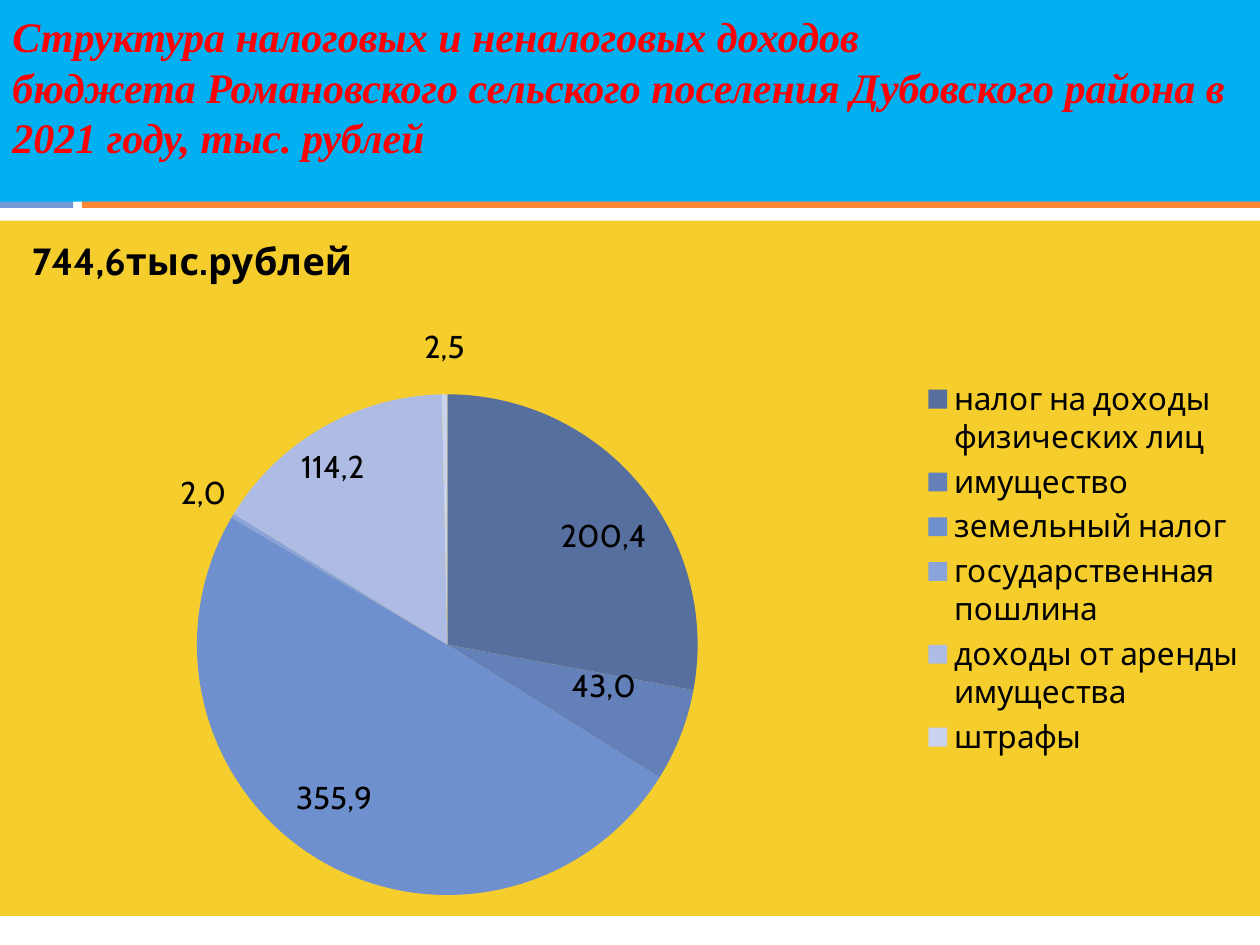
from lxml import etree
from pptx import Presentation
from pptx.chart.data import CategoryChartData
from pptx.dml.color import RGBColor
from pptx.enum import chart as ch, shapes, text
from pptx.oxml.ns import qn
from pptx.util import Inches, Pt

COLORS = {
    "header": "00B0F0", "title": "FF0000", "blue": "7598D9",
    "orange": "FE8637", "panel": "F5CD2D", "text": "000000",
}
TOTAL = "744,6тыс.рублей"
INSIDE = ch.XL_LABEL_POSITION.INSIDE_END
OUTSIDE = ch.XL_LABEL_POSITION.OUTSIDE_END
# category, value, slice colour, label position, label shift (share of chart)
INCOME = [
    ("налог на доходы физических лиц", 200.4, "566F9E", INSIDE, (0.01, 0.04)),
    ("имущество", 43, "6480B8", INSIDE, (-0.03, -0.04)),
    ("земельный налог", 355.9, "6F90CF", INSIDE, (-0.02, -0.05)),
    ("государственная пошлина", 2, "8BA3DB", OUTSIDE, (0, 0)),
    ("доходы от аренды имущества", 114.2, "AEBCE4", INSIDE, (-0.02, 0.02)),
    ("штрафы", 2.5, "CAD3ED", OUTSIDE, (0, -0.03)),
]


def rgb(name):
    return RGBColor.from_string(COLORS.get(name, name))


def add_bar(s, color, left, top, width, height):
    sp = s.shapes.add_shape(shapes.MSO_SHAPE.RECTANGLE, Inches(left), Inches(top),
                            Inches(width), Inches(height))
    sp.shadow.inherit = False
    sp.fill.solid()
    sp.fill.fore_color.rgb = rgb(color)
    sp.line.fill.background()
    return sp


def add_header(s, left, top, width, height):
    """Two-colour strip with the title block covering its upper part."""
    strip_top = top + height - 0.2
    add_bar(s, "blue", left, strip_top, 0.58, 0.25)
    add_bar(s, "orange", left + 0.65, strip_top, width - 0.65, 0.25)
    tf = add_bar(s, "header", left, top, width, height).text_frame
    tf.word_wrap = True
    tf.vertical_anchor = text.MSO_ANCHOR.MIDDLE
    p = tf.paragraphs[0]
    p.text = ("Структура налоговых и неналоговых доходов\v"
              "бюджета Романовского сельского поселения Дубовского района в "
              "2021 году, тыс. рублей")
    p.alignment = text.PP_ALIGN.LEFT
    p.font.name, p.font.size = "Times New Roman", Pt(24)
    p.font.bold = p.font.italic = True
    p.font.color.rgb = rgb("title")


def set_font(font, size, bold=False):
    font.name, font.size, font.bold = "Cabin", Pt(size), bold
    font.color.rgb = rgb("text")


def set_layout(parent, index, edge=False, inner=False, **place):
    """Give a chart part a manual layout, in shares of the chart."""
    for old in parent.findall(qn("c:layout")):
        parent.remove(old)
    layout = etree.Element(qn("c:layout"))
    manual = etree.SubElement(layout, qn("c:manualLayout"))
    values = {"layoutTarget": "inner"} if inner else {}
    if edge:
        values.update(xMode="edge", yMode="edge")
    for tag, value in {**values, **place}.items():
        etree.SubElement(manual, qn(f"c:{tag}")).set("val", str(value))
    parent.insert(index, layout)


def add_slice_labels(series):
    """Colour each slice and label it with its value."""
    for i, (_, value, color, position, (dx, dy)) in enumerate(INCOME):
        point = series.points[i]
        point.format.fill.solid()
        point.format.fill.fore_color.rgb = rgb(color)
        point.format.line.fill.background()
        label = point.data_label
        p = label.text_frame.paragraphs[0]
        p.text = f"{value:.1f}".replace(".", ",")
        set_font(p.font, 18)
        label.position = position
        if dx or dy:
            set_layout(label._dLbl, 1, x=dx, y=dy)
    labels = series.data_labels
    labels.show_value = labels.show_category_name = labels.show_series_name = True
    for leader in labels._element.findall(qn("c:showLeaderLines")):
        leader.set("val", "0")


def add_pie(s, left, top, width, height):
    data = CategoryChartData(number_format="0.0")
    data.categories = [row[0] for row in INCOME]
    data.add_series(TOTAL, [row[1] for row in INCOME])
    chart = s.shapes.add_chart(ch.XL_CHART_TYPE.PIE, Inches(left), Inches(top),
                               Inches(width), Inches(height), data).chart
    set_font(chart.font, 18)

    chart.has_title = True
    p = chart.chart_title.text_frame.paragraphs[0]
    p.text = TOTAL
    set_font(p.font, 21.6, bold=True)
    set_layout(chart.chart_title._element, 1, edge=True, x=0.02, y=0.01)

    chart.has_legend = True
    legend = chart.legend
    legend.position = ch.XL_LEGEND_POSITION.RIGHT
    legend.include_in_layout = False
    set_font(legend.font, 18)
    set_layout(legend._element, 1, edge=True, x=0.73, y=0.22, w=0.26, h=0.56)

    plot = chart.plots[0]
    plot.vary_by_categories = True
    plot_area = chart._chartSpace.chart.plotArea
    set_layout(plot_area, 0, edge=True, inner=True, x=0.15, y=0.25, w=0.41, h=0.72)
    add_slice_labels(plot.series[0])

    props = etree.Element(qn("c:spPr"))
    fill = etree.SubElement(props, qn("a:solidFill"))
    etree.SubElement(fill, qn("a:srgbClr")).set("val", COLORS["panel"])
    line = etree.SubElement(props, qn("a:ln"))
    etree.SubElement(line, qn("a:noFill"))
    chart._chartSpace.chart.addnext(props)


def main():
    prs = Presentation()
    prs.slide_width, prs.slide_height = Inches(10), Inches(7.5)
    s = prs.slides.add_slide(prs.slide_layouts[6])
    add_header(s, 0, -0.23, 10, 1.83)
    add_pie(s, 0, 1.75, 10, 5.52)
    prs.save("out.pptx")


if __name__ == "__main__":
    main()
